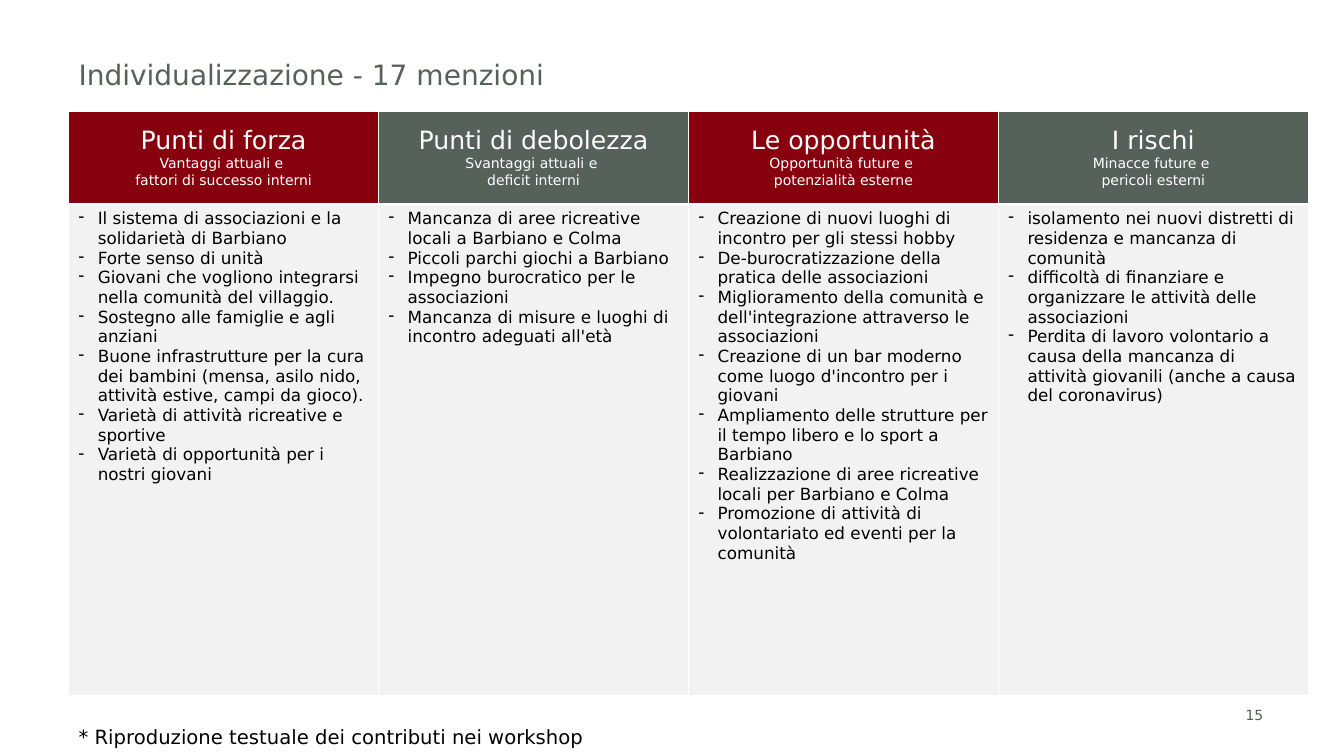
from lxml.etree import SubElement
from pptx import Presentation
from pptx.dml.color import RGBColor
from pptx.enum.text import MSO_ANCHOR as Anchor, PP_ALIGN as Align
from pptx.oxml.ns import qn
from pptx.util import Cm, Pt

RED = RGBColor(0x87, 0x00, 0x0D)
SLATE = RGBColor(0x56, 0x61, 0x5A)
PALE = RGBColor(0xF2, 0xF2, 0xF2)
WHITE = RGBColor(0xFF, 0xFF, 0xFF)
BLACK = RGBColor(0x00, 0x00, 0x00)

# Heading, two subtitle lines, contributions
swot = [
    ("Punti di forza", "Vantaggi attuali e ", "fattori di successo interni", [
        "Il sistema di associazioni e la solidarietà di Barbiano",
        "Forte senso di unità",
        "Giovani che vogliono integrarsi nella comunità del villaggio.",
        "Sostegno alle famiglie e agli anziani",
        "Buone infrastrutture per la cura dei bambini (mensa, asilo nido, "
        "attività estive, campi da gioco).",
        "Varietà di attività ricreative e sportive",
        "Varietà di opportunità per i nostri giovani",
    ]),
    ("Punti di debolezza", "Svantaggi attuali e ", "deficit interni", [
        "Mancanza di aree ricreative locali a Barbiano e Colma",
        "Piccoli parchi giochi a Barbiano",
        "Impegno burocratico per le associazioni",
        "Mancanza di misure e luoghi di incontro adeguati all'età",
    ]),
    ("Le opportunità", "Opportunità future e ", "potenzialità esterne", [
        "Creazione di nuovi luoghi di incontro per gli stessi hobby",
        "De-burocratizzazione della pratica delle associazioni",
        "Miglioramento della comunità e dell'integrazione attraverso le associazioni",
        "Creazione di un bar moderno come luogo d'incontro per i giovani",
        "Ampliamento delle strutture per il tempo libero e lo sport a Barbiano",
        "Realizzazione di aree ricreative locali per Barbiano e Colma",
        "Promozione di attività di volontariato ed eventi per la comunità",
    ]),
    ("I rischi", "Minacce future e ", "pericoli esterni", [
        "isolamento nei nuovi distretti di residenza e mancanza di comunità",
        "difficoltà di finanziare e organizzare le attività delle associazioni",
        "Perdita di lavoro volontario a causa della mancanza di attività "
        "giovanili (anche a causa del coronavirus)",
    ]),
]


def write_lines(frame, lines, color, align=Align.LEFT, bullet=None):
    """Write (text, size) pairs, one paragraph each."""
    for i, (text, size) in enumerate(lines):
        paragraph = frame.paragraphs[0] if i == 0 else frame.add_paragraph()
        paragraph.alignment = align
        if bullet:
            props = paragraph._p.get_or_add_pPr()
            props.set("marL", str(Cm(0.48)))
            props.set("indent", str(-Cm(0.48)))
            SubElement(props, qn("a:buChar"), char=bullet)
        run = paragraph.add_run()
        run.text = text
        look = {"name": "DejaVu Sans", "size": Pt(size), "bold": False}
        for key, value in look.items():
            setattr(run.font, key, value)
        run.font.color.rgb = color


def paint_cell(cell, color):
    """Give a cell thin white borders and a plain fill."""
    props = cell._tc.get_or_add_tcPr()
    for side in ("lnL", "lnR", "lnT", "lnB"):
        line = SubElement(props, qn(f"a:{side}"), w=str(Pt(1)))
        fill = SubElement(line, qn("a:solidFill"))
        SubElement(fill, qn("a:srgbClr"), val=str(WHITE))
    cell.fill.solid()
    cell.fill.fore_color.rgb = color


deck = Presentation()
deck.slide_width, deck.slide_height = Cm(33.87), Cm(19.05)
slide = deck.slides.add_slide(deck.slide_layouts[6])

# Title, footnote and page number
captions = [
    ("Individualizzazione - 17 menzioni", 20, SLATE, (1.73, 1.32, 28.2, 1), Anchor.TOP, True),
    ("* Riproduzione testuale dei contributi nei workshop", 14, BLACK,
     (1.73, 18.14, 18.2, 0.96), Anchor.TOP, False),
    ("15", 10, SLATE, (31.14, 17.53, 1.83, 0.96), Anchor.MIDDLE, True),
]
for text, size, color, place, anchor, wrap in captions:
    frame = slide.shapes.add_textbox(*map(Cm, place)).text_frame
    frame.word_wrap = wrap
    frame.vertical_anchor = anchor
    write_lines(frame, [(text, size)], color)

# SWOT table
table = slide.shapes.add_table(2, len(swot), Cm(1.73), Cm(2.8), Cm(31.24), Cm(14.73)).table
table.rows[0].height, table.rows[1].height = Cm(2.34), Cm(12.39)
for col, (heading, scope, detail, contributions) in enumerate(swot):
    table.columns[col].width = Cm(7.81)
    header, body = table.cell(0, col), table.cell(1, col)

    paint_cell(header, SLATE if col % 2 else RED)
    header.vertical_anchor = Anchor.MIDDLE
    write_lines(header.text_frame, [(heading, 18), (scope, 10), (detail, 10)],
                WHITE, Align.CENTER)

    paint_cell(body, PALE)
    write_lines(body.text_frame, [(item, 12) for item in contributions], BLACK, bullet="-")

deck.save("out.pptx")
